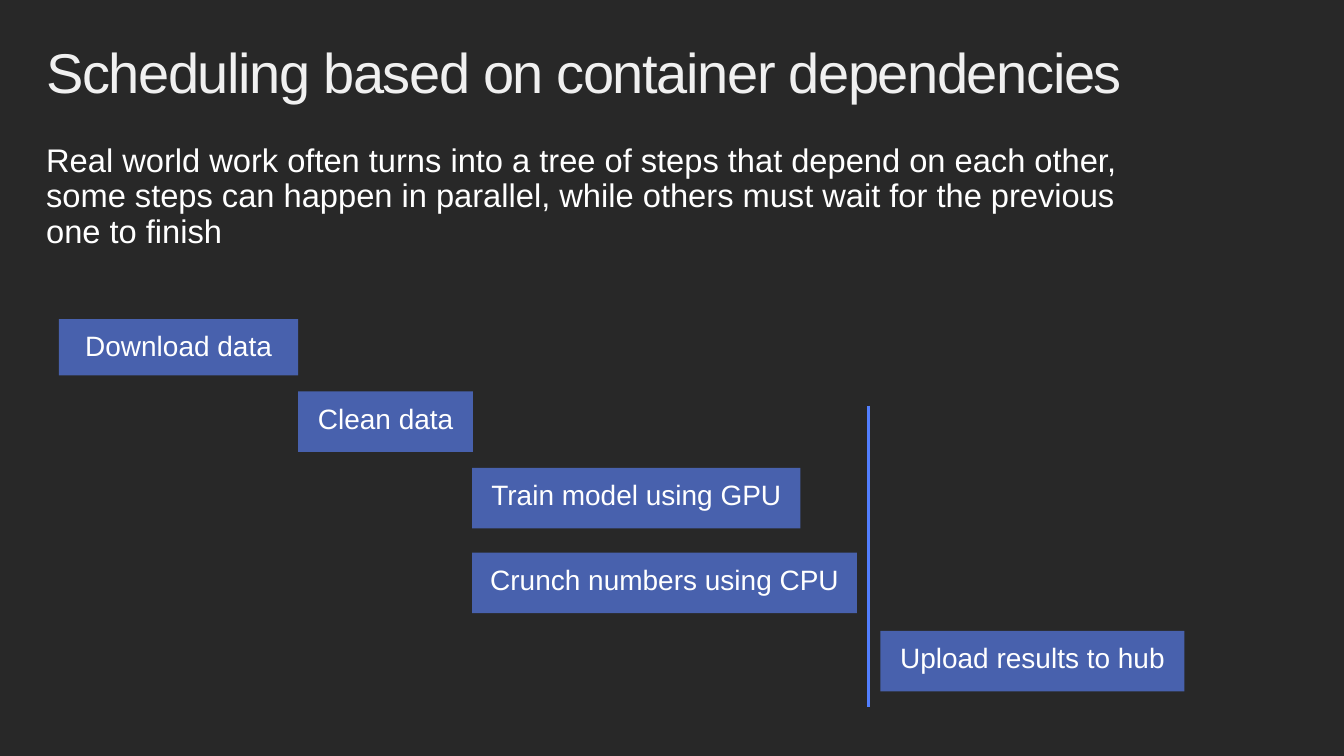
import pptx
import pptx.dml.color
import pptx.enum.shapes
import pptx.enum.text
import pptx.util
from lxml import etree
from pptx.util import Inches, Pt

TITLE = "Scheduling based on container dependencies"
INTRO = ("Real world work often turns into a tree of steps that depend on each other, "
         "some steps can happen in parallel, while others must wait for the previous "
         "one to finish")
# Step label, left, top, width, height in inches
STEPS = [
    ("Download data", 0.7, 3.8, 2.85, 0.67),
    ("Clean data", 3.55, 4.66, 2.08, 0.72),
    ("Train model using GPU", 5.62, 5.57, 3.91, 0.72),
    ("Crunch numbers using CPU", 5.62, 6.58, 4.58, 0.72),
    ("Upload results to hub", 10.48, 7.51, 3.62, 0.72),
]
BARRIER_X, BARRIER_TOP, BARRIER_BOTTOM = 10.34, 4.83, 8.42
ALIGN = pptx.enum.text.PP_ALIGN


def color(value):
    return pptx.dml.color.RGBColor.from_string(value)


def write(shape, text, size, ink, align=ALIGN.LEFT):
    frame = shape.text_frame
    frame.text = text
    frame.word_wrap = True
    frame.auto_size = pptx.enum.text.MSO_AUTO_SIZE.NONE
    frame.vertical_anchor = pptx.enum.text.MSO_ANCHOR.TOP
    frame.margin_left = frame.margin_right = Inches(0.2)
    frame.margin_top = frame.margin_bottom = Inches(0.16)
    para = frame.paragraphs[0]
    para.alignment = align
    para.line_spacing = 0.9
    para.space_before = Pt(0)
    span = para.runs[0]
    span.font.name = "Arial"
    span.font.size = Pt(size)
    span.font.color.rgb = color(ink)
    return para


def main():
    deck = pptx.Presentation()
    deck.slide_width, deck.slide_height = Inches(16), Inches(9)
    page = deck.slides.add_slide(deck.slide_layouts[5])
    page.background.fill.solid()
    page.background.fill.fore_color.rgb = color("282828")

    # Title, with slightly tightened letters
    title = page.shapes.title
    title.left, title.top = Inches(0.35), Inches(0.38)
    title.width, title.height = Inches(15.29), Inches(1.18)
    heading = write(title, TITLE, 48, "F0F0F0")
    heading.runs[0].font._element.set("spc", "-120")

    # Steps of the schedule
    for label, *place in STEPS:
        box = page.shapes.add_shape(
            pptx.enum.shapes.MSO_SHAPE.RECTANGLE, *map(Inches, place))
        box.shadow.inherit = False
        box.fill.solid()
        box.fill.fore_color.rgb = color("4861AD")
        box.line.fill.background()
        write(box, label, 24, "FFFFFF", ALIGN.CENTER)

    # Barrier that the last step waits for
    barrier = page.shapes.add_connector(
        pptx.enum.shapes.MSO_CONNECTOR.STRAIGHT,
        Inches(BARRIER_X), Inches(BARRIER_TOP),
        Inches(BARRIER_X), Inches(BARRIER_BOTTOM))
    barrier.line.color.rgb = color("527FFF")
    barrier.line.width = Pt(2.25)
    etree.SubElement(barrier._element.spPr, pptx.oxml.ns.qn("a:effectLst"))

    # Introduction
    intro = page.shapes.add_textbox(
        Inches(0.35), Inches(1.56), Inches(13.63), Inches(1.6))
    write(intro, INTRO, 28, "FFFFFF").space_after = Pt(18)

    deck.save("out.pptx")


if __name__ == "__main__":
    main()
